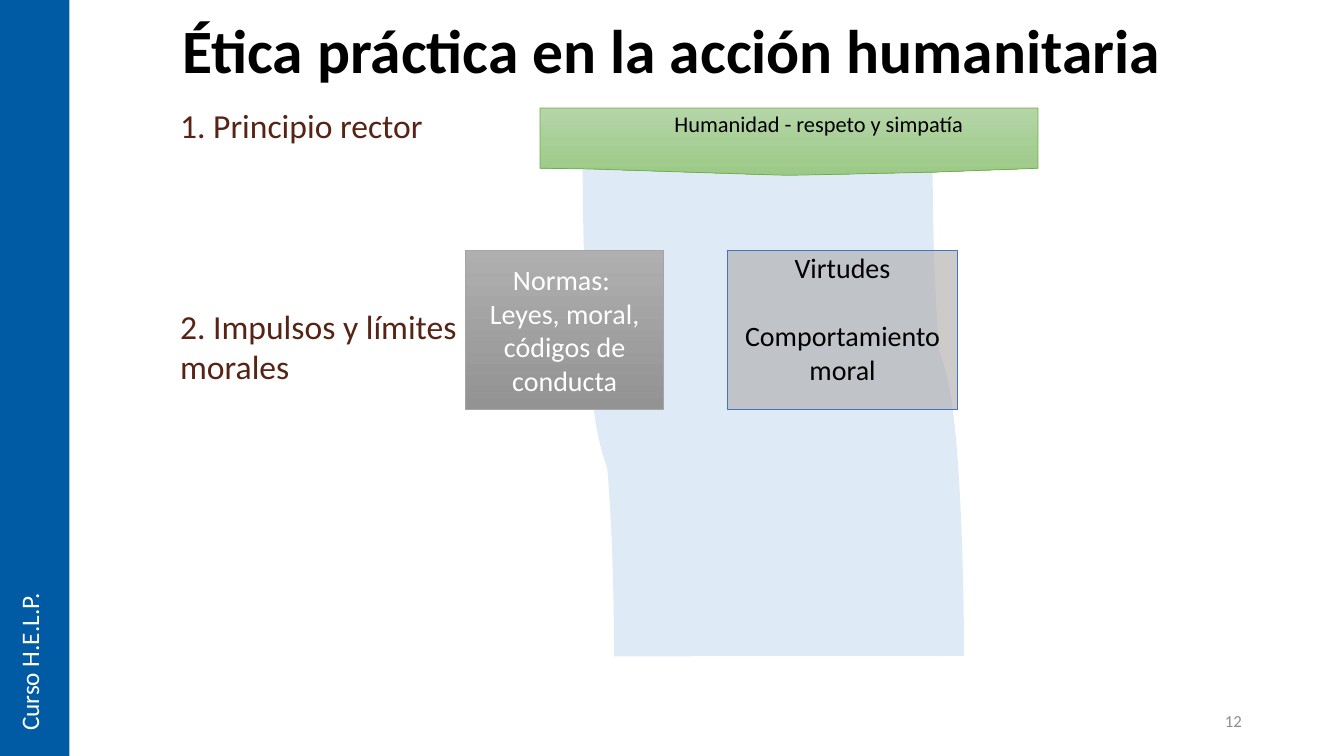
from lxml import etree
from pptx import Presentation
from pptx.dml.color import RGBColor
from pptx.enum.shapes import MSO_CONNECTOR, MSO_SHAPE
from pptx.enum.text import MSO_ANCHOR, MSO_AUTO_SIZE, PP_ALIGN
from pptx.oxml.ns import qn
from pptx.util import Cm, Pt

COLORS = {
    "black": "000000", "white": "FFFFFF", "bar": "005BA4", "brown": "572314",
    "page": "8C8C8C", "flow": "5B9BD5", "green_top": "B5D5A7",
    "green_bottom": "9CC987", "green_line": "70AD47", "gray_top": "AFAFAF",
    "gray_bottom": "939393", "gray_line": "A5A5A5", "virtue": "AFABAB",
    "virtue_line": "4472C4",
}
BANNER_OUTLINE = [(26.16, 2.72), (26.16, 4.24), (23.47, 4.34), (19.86, 4.42),
                  (15.85, 4.29), (15, 4.26), (13.61, 4.24)]


def rgb(name):
    return RGBColor.from_string(COLORS[name])


def write(shape, text, size, color, align=PP_ALIGN.LEFT, anchor=MSO_ANCHOR.TOP,
          bold=False):
    frame = shape.text_frame
    frame.text = text
    frame.word_wrap = True
    frame.auto_size = MSO_AUTO_SIZE.NONE
    frame.vertical_anchor = anchor
    for paragraph in frame.paragraphs:
        paragraph.alignment = align
        for run in paragraph.runs:
            run.font.name = "Calibri"
            run.font.size = Pt(size)
            run.font.bold = bold
            run.font.color.rgb = rgb(color)
    return frame


def add_label(slide, box, text, size, color, **options):
    shape = slide.shapes.add_textbox(*map(Cm, box))
    return write(shape, text, size, color, **options)


def add_box(slide, box):
    shape = slide.shapes.add_shape(MSO_SHAPE.RECTANGLE, *map(Cm, box))
    shape.shadow.inherit = False
    return shape


def set_outline(shape, color):
    shape.line.color.rgb = rgb(color)
    shape.line.width = Pt(0.5)


def fill_gradient(shape, top, bottom):
    shape.fill.gradient()
    shape.fill.gradient_angle = 270
    for stop, color in zip(shape.fill.gradient_stops, (top, bottom)):
        stop.color.rgb = rgb(color)


def set_opacity(fill_parent, percent):
    """Make the solid colour under the given element partly transparent."""
    color = fill_parent.find(qn("a:solidFill")).find(qn("a:srgbClr"))
    etree.SubElement(color, qn("a:alpha")).set("val", str(percent * 1000))


def add_title(slide):
    title = slide.shapes.title
    title.left, title.top, title.width, title.height = map(
        Cm, (4.34, 0.38, 29.29, 1.93))
    frame = write(title, "Ética práctica en la acción humanitaria", 44, "black",
                  anchor=MSO_ANCHOR.MIDDLE, bold=True)
    frame.paragraphs[0].line_spacing = 0.9


def add_sidebar(slide):
    bar = add_box(slide, (0, 0, 1.75, 19.05))
    bar.fill.solid()
    bar.fill.fore_color.rgb = rgb("bar")
    bar.line.fill.background()
    frame = add_label(slide, (0.23, 14.76, 1.27, 3.91), "Curso H.E.L.P.", 18, "white")
    frame.word_wrap = False
    frame._txBody.bodyPr.set("vert", "vert270")


def add_flow(slide):
    """Draw the broad pale band that runs down behind the boxes."""
    flow = slide.shapes.add_connector(
        MSO_CONNECTOR.CURVE, Cm(25.7), Cm(9.93), Cm(13.28), Cm(10.72))
    flow.line.color.rgb = rgb("flow")
    flow.line.width = Pt(250)
    properties = flow._element.spPr
    properties.find(qn("a:xfrm")).set("rot", "16200000")
    set_opacity(properties.find(qn("a:ln")), 20)
    etree.SubElement(properties, qn("a:effectLst"))


def add_banner(slide):
    builder = slide.shapes.build_freeform(Cm(13.61), Cm(2.72))
    builder.add_line_segments([(Cm(x), Cm(y)) for x, y in BANNER_OUTLINE])
    banner = builder.convert_to_shape()
    banner.shadow.inherit = False
    fill_gradient(banner, "green_top", "green_bottom")
    set_outline(banner, "green_line")
    frame = write(banner, "Humanidad - respeto y simpatía", 16, "black",
                  align=PP_ALIGN.CENTER)
    paragraph = frame.paragraphs[0]
    paragraph.line_spacing = 0.9
    paragraph._p.get_or_add_pPr().set("marL", str(Cm(1.5)))


def add_norms(slide):
    norms = add_box(slide, (11.73, 6.32, 5, 3.99))
    fill_gradient(norms, "gray_top", "gray_bottom")
    set_outline(norms, "gray_line")
    write(norms, "Normas: \nLeyes, moral, códigos de conducta", 20, "white",
          align=PP_ALIGN.CENTER, anchor=MSO_ANCHOR.MIDDLE)


def add_virtues(slide):
    virtues = add_box(slide, (18.34, 6.32, 5.79, 3.99))
    virtues.fill.solid()
    virtues.fill.fore_color.rgb = rgb("virtue")
    set_opacity(virtues._element.spPr, 62)
    set_outline(virtues, "virtue_line")
    frame = write(virtues, "Virtudes\nComportamiento moral", 20, "black",
                  align=PP_ALIGN.CENTER)
    frame.margin_top = 0
    frame.paragraphs[1].space_before = Pt(24.4)


def main():
    presentation = Presentation()
    presentation.slide_width, presentation.slide_height = Cm(33.87), Cm(19.05)
    slide = presentation.slides.add_slide(presentation.slide_layouts[5])
    add_label(slide, (23.93, 17.65, 7.62, 1.02), "12", 12, "page",
              align=PP_ALIGN.RIGHT, anchor=MSO_ANCHOR.MIDDLE)
    add_sidebar(slide)
    add_title(slide)
    add_flow(slide)
    add_norms(slide)
    add_banner(slide)
    for box, text in (((4.34, 2.64, 7.24, 1.02), "1. Principio rector"),
                      ((4.34, 7.7, 9.37, 2.06), "2. Impulsos y límites morales")):
        frame = add_label(slide, box, text, 24, "brown")
        frame.margin_left = frame.margin_right = Cm(0.2)
        frame.margin_top = frame.margin_bottom = 0
    add_virtues(slide)
    presentation.save("out.pptx")


if __name__ == "__main__":
    main()
